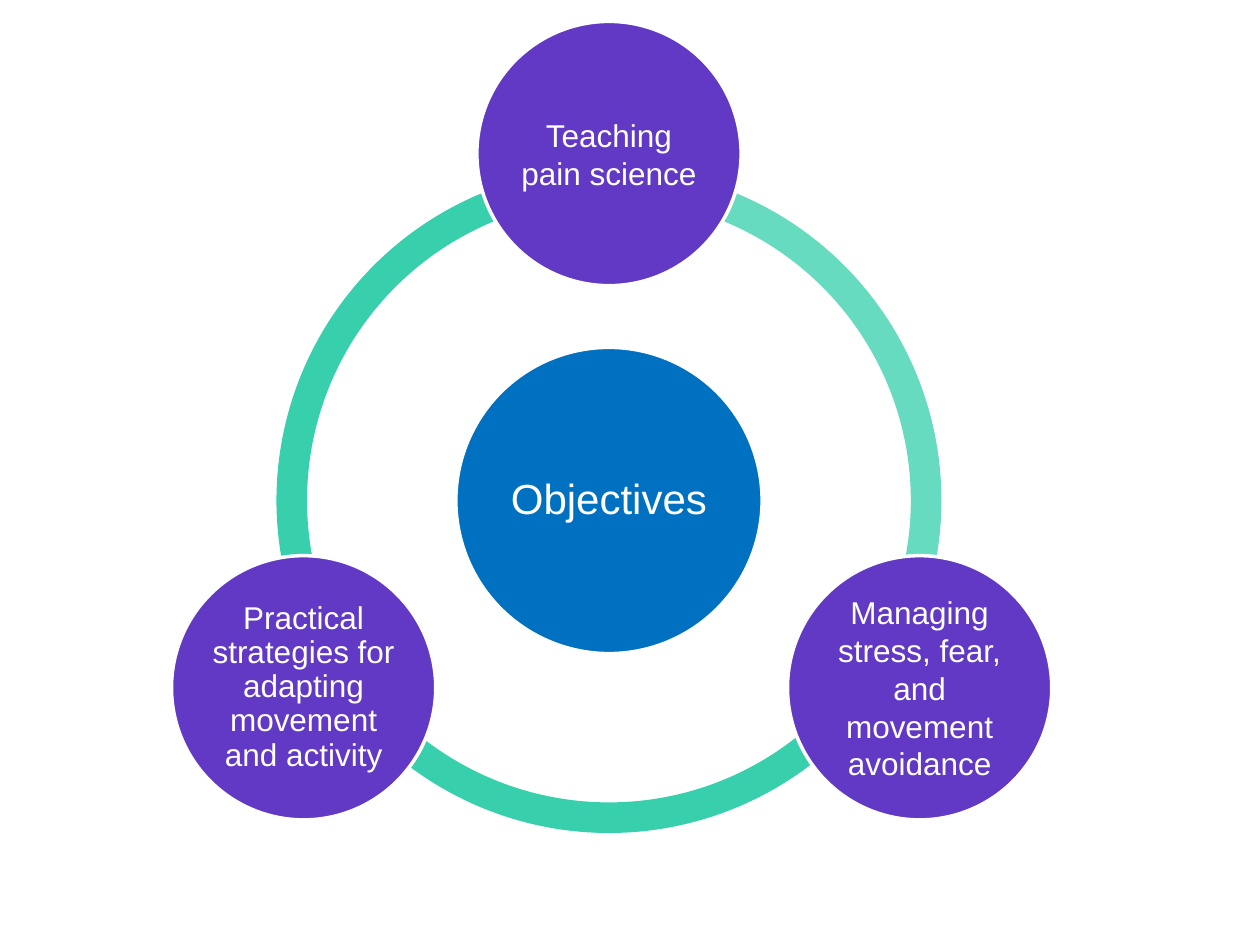
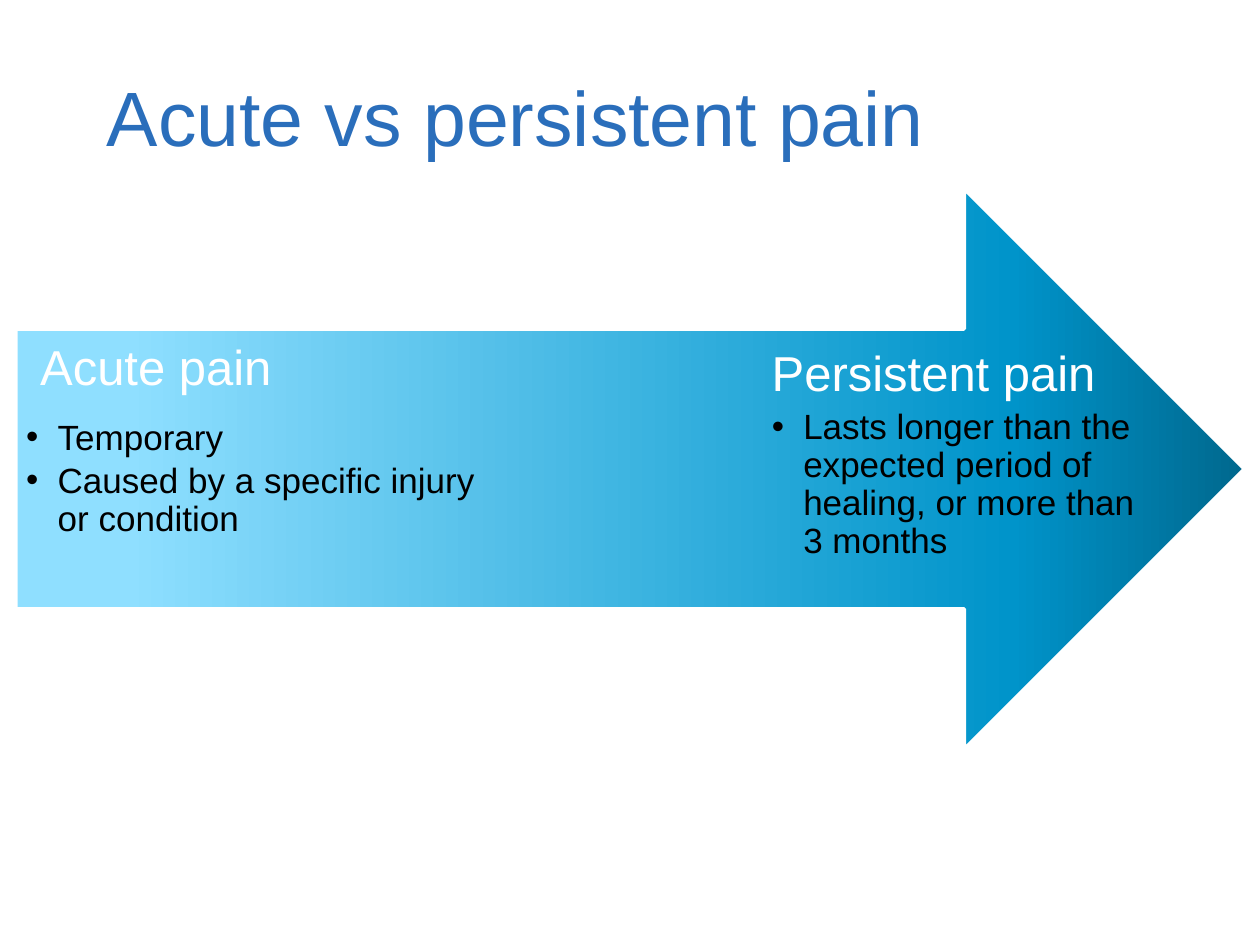
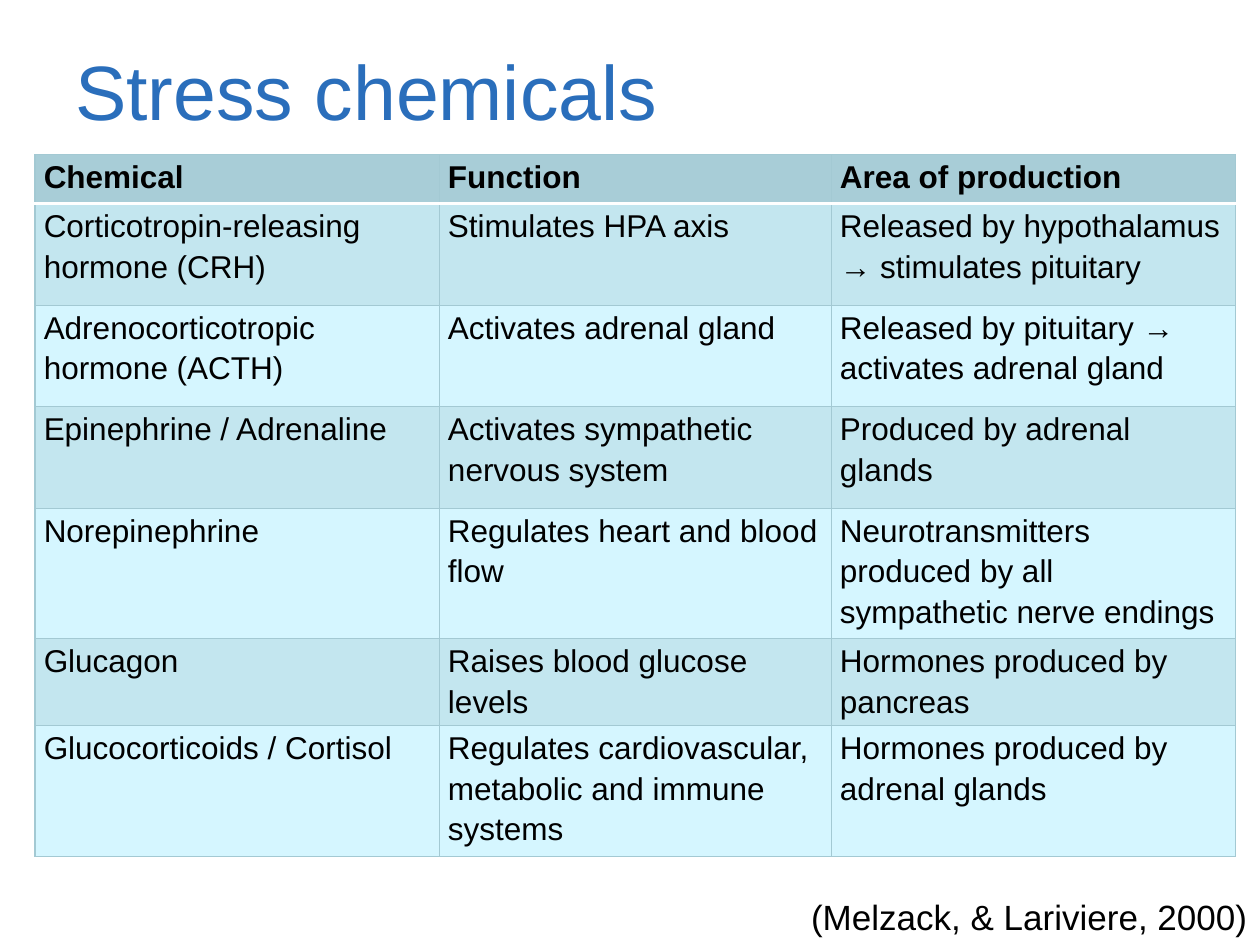
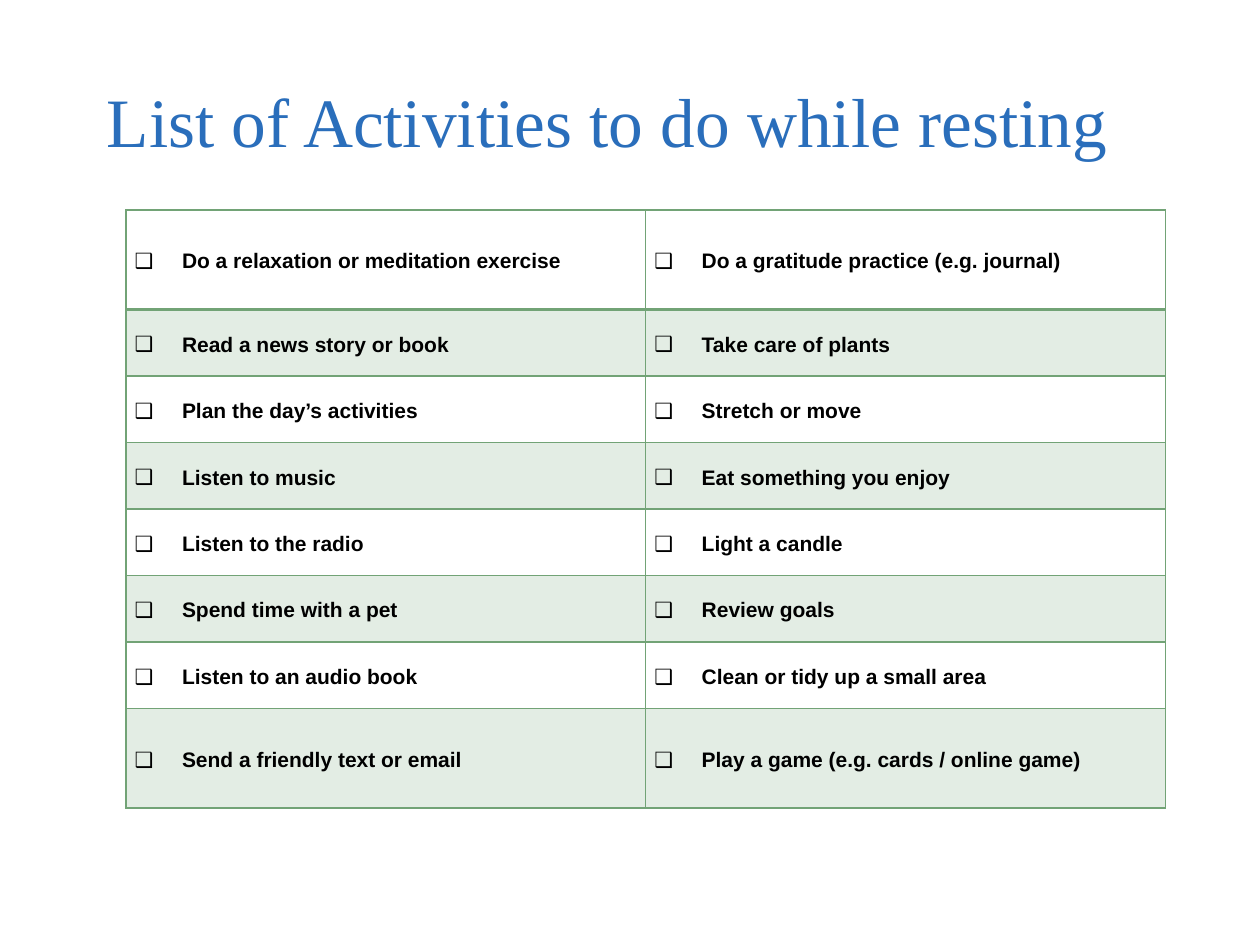
from copy import deepcopy

from lxml import etree
from pptx import Presentation
from pptx.dml.color import RGBColor
from pptx.enum.shapes import MSO_SHAPE
from pptx.enum.text import MSO_ANCHOR, PP_ALIGN
from pptx.oxml.ns import qn
from pptx.util import Pt

LEFT, CENTER, RIGHT = PP_ALIGN.LEFT, PP_ALIGN.CENTER, PP_ALIGN.RIGHT
TOP, MIDDLE, BOTTOM = MSO_ANCHOR.TOP, MSO_ANCHOR.MIDDLE, MSO_ANCHOR.BOTTOM
OVAL, BLOCK_ARC, RIGHT_ARROW = MSO_SHAPE.OVAL, MSO_SHAPE.BLOCK_ARC, MSO_SHAPE.RIGHT_ARROW

WHITE = RGBColor(0xFF, 0xFF, 0xFF)
BLACK = RGBColor(0x00, 0x00, 0x00)
TITLE_BLUE = RGBColor(0x2A, 0x6E, 0xBB)
HUB_BLUE = RGBColor(0x00, 0x70, 0xC0)
PURPLE = RGBColor(0x61, 0x39, 0xC5)
TEAL = RGBColor(0x38, 0xD0, 0xAC)
LIGHT_TEAL = RGBColor(0x67, 0xDB, 0xBF)
ARROW_DARK = RGBColor(0x00, 0x68, 0x8E)
ARROW_MID = RGBColor(0x00, 0x94, 0xCA)
ARROW_LIGHT = RGBColor(0x8F, 0xDF, 0xFF)
HEADER_TEAL = RGBColor(0xA8, 0xCD, 0xD7)
BAND_TEAL = RGBColor(0xC3, 0xE6, 0xEF)
PALE_CYAN = RGBColor(0xD5, 0xF6, 0xFF)
GRID_TEAL = RGBColor(0xA3, 0xC9, 0xD3)
GREEN = RGBColor(0x72, 0xA3, 0x76)
BAND_GREEN = RGBColor(0xE3, 0xED, 0xE4)

SANS, SERIF = "Arial", "Times New Roman"
TITLE_BOX = (54, 6, 612, 90)

HUB = ("Objectives", (348, 286), 175, HUB_BLUE, 24, 0.9)
OBJECTIVES = [
    ("Teaching pain science", (348, 87.75), 151, PURPLE, 18, 1.0),
    ("Managing stress, fear, and movement avoidance", (525.5, 393), 151, PURPLE, 18, 1.0),
    ("Practical strategies for adapting movement and activity", (173.5, 393), 151, PURPLE, 18, 0.9),
]
RING_SIZE = 380
RING_THICKNESS = 0.046
RING_ARCS = [(150, 270.77, TEAL), (30, 150, TEAL), (270.76, 30, LIGHT_TEAL)]

ARROW_BOX = (9, 108, 702, 320)
ARROW_STOPS = [(0, ARROW_DARK), (0.19, ARROW_MID), (0.91, ARROW_LIGHT)]
PAIN_TYPES = [
    ("Acute pain", (23, 159, 261, 105),
     ["Temporary", "Caused by a specific injury or condition"], (15, 240, 261, 84)),
    ("Persistent pain", (441, 162, 261, 105),
     ["Lasts longer than the expected period of healing, or more than 3 months"], (441, 234, 214, 101)),
]

CHEMICALS = [
    ("Chemical", "Function", "Area of production"),
    ("Corticotropin-releasing hormone (CRH)", "Stimulates HPA axis",
     "Released by hypothalamus → stimulates pituitary"),
    ("Adrenocorticotropic hormone (ACTH)", "Activates adrenal gland",
     "Released by pituitary → activates adrenal gland"),
    ("Epinephrine / Adrenaline", "Activates sympathetic nervous system", "Produced by adrenal glands"),
    ("Norepinephrine", "Regulates heart and blood flow",
     "Neurotransmitters produced by all sympathetic nerve endings"),
    ("Glucagon", "Raises blood glucose levels", "Hormones produced by pancreas"),
    ("Glucocorticoids / Cortisol", "Regulates cardiovascular, metabolic and immune systems",
     "Hormones produced by adrenal glands"),
]
CHEMICAL_COLUMNS = [231, 224, 231]
CHEMICAL_ROWS = [28, 58, 58, 58, 58, 45, 68]
CITATION = "(Melzack, & Lariviere, 2000)"

ACTIVITIES = [
    ("Do a relaxation or meditation exercise", "Do a gratitude practice (e.g. journal)"),
    ("Read a news story or book", "Take care of plants"),
    ("Plan the day’s activities", "Stretch or move"),
    ("Listen to music", "Eat something you enjoy"),
    ("Listen to the radio", "Light a candle"),
    ("Spend time with a pet", "Review goals"),
    ("Listen to an audio book", "Clean or tidy up a small area"),
    ("Send a friendly text or email", "Play a game (e.g. cards / online game)"),
]
ACTIVITY_COLUMNS = [297, 297]
ACTIVITY_ROWS = [57] + [38] * 6 + [57]


def points(box):
    return [Pt(value) for value in box]


def set_margins(holder, across, down):
    holder.margin_left = holder.margin_right = Pt(across)
    holder.margin_top = holder.margin_bottom = Pt(down)


def write(paragraph, text, size, color, font=SANS, bold=False, align=LEFT,
          spacing=1.0, after=0, bullet=None, indent=18):
    if bullet:
        properties = paragraph._p.get_or_add_pPr()
        properties.set("marL", str(Pt(indent)))
        properties.set("indent", str(-Pt(indent)))
        etree.SubElement(properties, qn("a:buFont")).set("typeface", SANS)
        etree.SubElement(properties, qn("a:buChar")).set("char", bullet)
    paragraph.alignment = align
    paragraph.line_spacing = spacing
    paragraph.space_after = Pt(after)
    run = paragraph.add_run()
    run.text = text
    run.font.name = font
    run.font.size = Pt(size)
    run.font.bold = bold
    run.font.color.rgb = color


def add_text(slide, box, lines, size, color, anchor=TOP, margins=(0, 0), **style):
    frame = slide.shapes.add_textbox(*points(box)).text_frame
    frame.word_wrap = True
    frame.vertical_anchor = anchor
    set_margins(frame, *margins)
    for index, line in enumerate(lines):
        paragraph = frame.add_paragraph() if index else frame.paragraphs[0]
        write(paragraph, line, size, color, **style)


def add_title(slide, title, box=TITLE_BOX, size=44, font=SANS):
    add_text(slide, box, [title], size, TITLE_BLUE, BOTTOM, (7.2, 3.6), font=font)


def add_preset(slide, preset, box, color=None, outlined=True):
    shape = slide.shapes.add_shape(preset, *points(box))
    shape.shadow.inherit = False
    if color is not None:
        shape.fill.solid()
        shape.fill.fore_color.rgb = color
    if outlined:
        shape.line.color.rgb = WHITE
        shape.line.width = Pt(2)
    else:
        shape.line.fill.background()
    return shape


def centred_box(center, size):
    return center[0] - size / 2, center[1] - size / 2, size, size


def add_circle(slide, label, center, size, color, text_size, spacing):
    circle = add_preset(slide, OVAL, centred_box(center, size), color)
    frame = circle.text_frame
    frame.word_wrap = True
    frame.vertical_anchor = MIDDLE
    set_margins(frame, 0, 0)
    write(frame.paragraphs[0], label, text_size, WHITE, align=CENTER, spacing=spacing)


def add_border(cell, side, color, width):
    line = etree.SubElement(cell._tc.get_or_add_tcPr(), qn("a:ln" + side))
    line.set("w", str(Pt(width)))
    solid = etree.SubElement(line, qn("a:solidFill"))
    etree.SubElement(solid, qn("a:srgbClr")).set("val", str(color))


def add_grid(slide, origin, rows, widths, heights, fills, grid, header_rule, anchor, text_style):
    head_fill, odd_fill, even_fill = fills
    table = slide.shapes.add_table(
        len(rows), len(widths), *points((*origin, sum(widths), sum(heights)))).table
    table.first_row = table.horz_banding = False
    for column, width in zip(table.columns, widths):
        column.width = Pt(width)
    for r, (texts, height) in enumerate(zip(rows, heights)):
        table.rows[r].height = Pt(height)
        borders = {"L": grid, "R": grid,
                   "T": header_rule if r == 1 else grid,
                   "B": header_rule if r == 0 else grid}
        fill = head_fill if r == 0 else odd_fill if r % 2 else even_fill
        for c, text in enumerate(texts):
            cell = table.cell(r, c)
            set_margins(cell, 5, 0)
            cell.vertical_anchor = anchor
            for side, (color, width) in borders.items():
                add_border(cell, side, color, width)
            cell.fill.solid()
            cell.fill.fore_color.rgb = fill
            style = {"bold": r == 0, **text_style}
            write(cell.text_frame.paragraphs[0], text, color=BLACK, spacing=1.15, **style)


def build_objectives(slide):
    for start, end, color in RING_ARCS:
        arc = add_preset(slide, BLOCK_ARC, centred_box(HUB[1], RING_SIZE), color, outlined=False)
        arc.adjustments[0] = start * 0.6
        arc.adjustments[1] = end * 0.6
        arc.adjustments[2] = RING_THICKNESS
    for circle in [HUB, *OBJECTIVES]:
        add_circle(slide, *circle)


def build_pain_types(slide):
    add_title(slide, "Acute vs persistent pain")
    arrow = add_preset(slide, RIGHT_ARROW, ARROW_BOX)
    arrow.fill.gradient()
    arrow.fill.gradient_angle = 180
    stops = arrow._element.spPr.find(".//" + qn("a:gsLst"))
    stops.append(deepcopy(stops[0]))
    for stop, (position, color) in zip(arrow.fill.gradient_stops, ARROW_STOPS):
        stop.position = position
        stop.color.rgb = color
    for heading, heading_box, facts, facts_box in PAIN_TYPES:
        add_text(slide, facts_box, facts, 20, BLACK, spacing=0.9, after=3, bullet="•")
        add_text(slide, heading_box, [heading], 28, WHITE, MIDDLE, spacing=0.9)


def build_chemicals(slide):
    add_title(slide, "Stress chemicals", (36, 22, 648, 59))
    add_grid(slide, (20, 88.5), CHEMICALS, CHEMICAL_COLUMNS, CHEMICAL_ROWS,
             (HEADER_TEAL, BAND_TEAL, PALE_CYAN), (GRID_TEAL, 0.75), (WHITE, 2),
             TOP, {"size": 18})
    add_text(slide, (196, 508, 524, 32), [CITATION], 20, BLACK, margins=(7.2, 3.6), align=RIGHT)


def build_activities(slide):
    add_title(slide, "List of Activities to do while resting", size=39.6, font=SERIF)
    add_grid(slide, (72, 120), ACTIVITIES, ACTIVITY_COLUMNS, ACTIVITY_ROWS,
             (WHITE, BAND_GREEN, WHITE), (GREEN, 1), (GREEN, 2),
             MIDDLE, {"size": 12, "bold": True, "bullet": "❑", "indent": 27})


def main():
    deck = Presentation()
    deck.slide_width, deck.slide_height = Pt(720), Pt(540)
    for build in (build_objectives, build_pain_types, build_chemicals, build_activities):
        build(deck.slides.add_slide(deck.slide_layouts[6]))
    deck.save("out.pptx")


if __name__ == "__main__":
    main()
